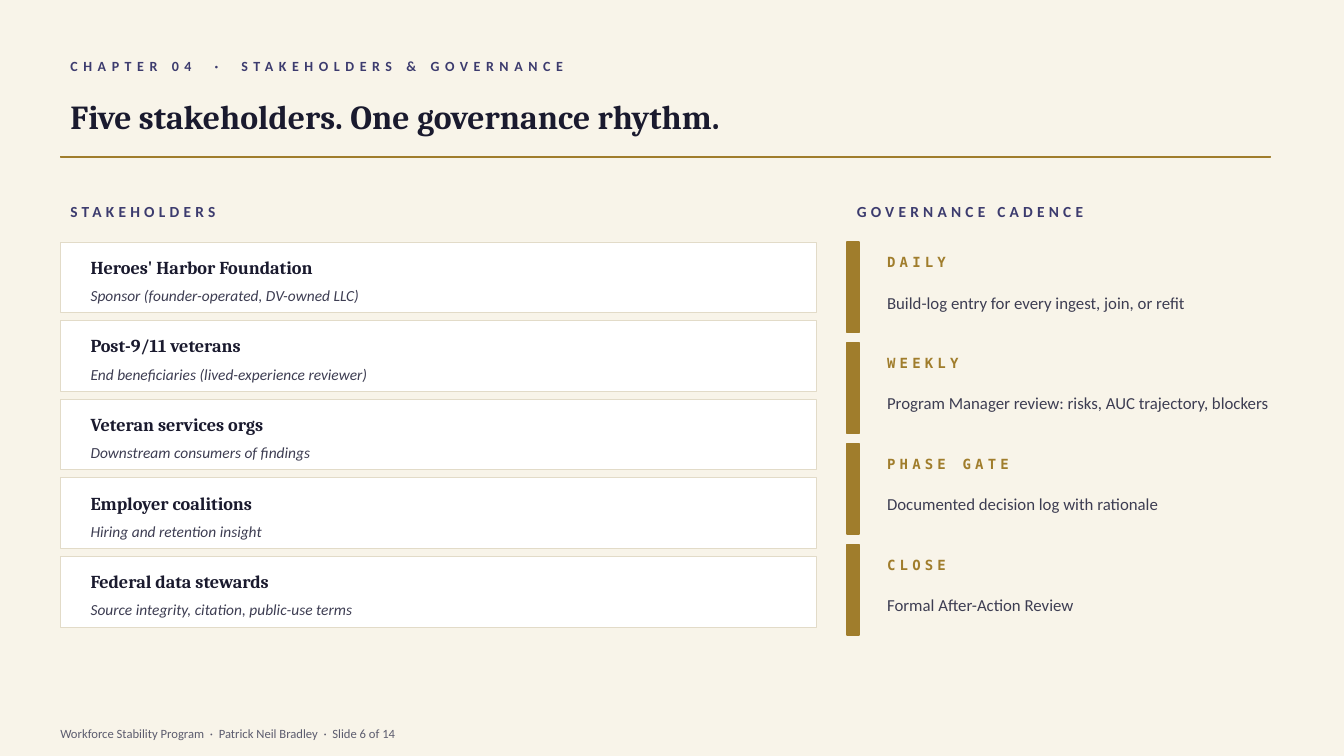
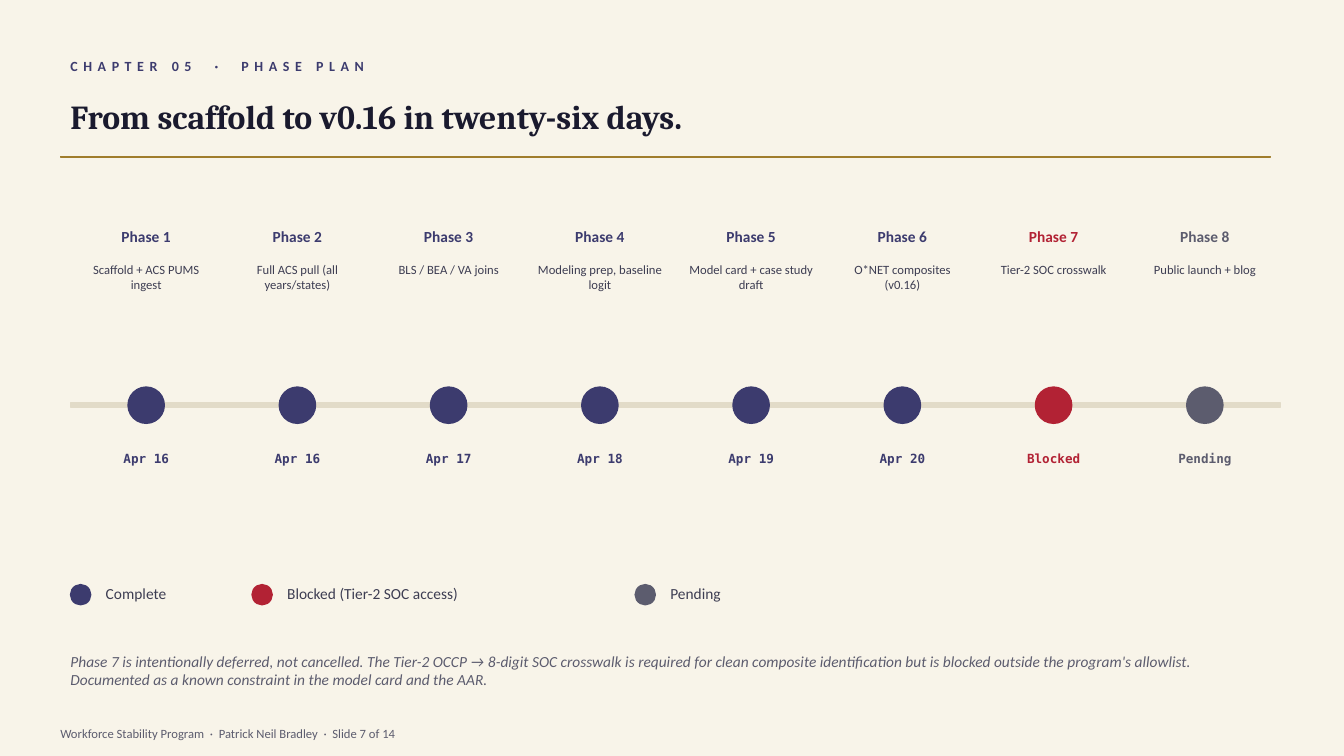
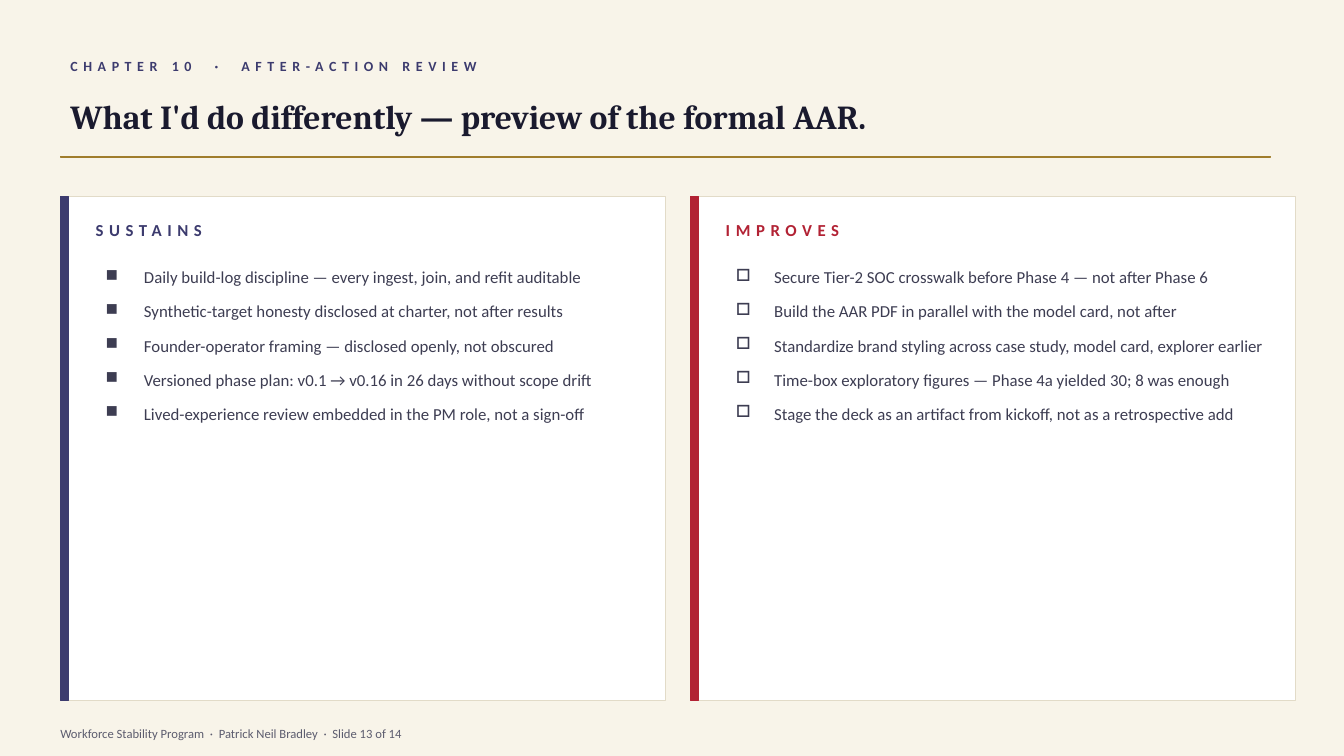
from lxml import etree
from pptx import Presentation
from pptx import util as u
from pptx.dml import color
from pptx.enum import shapes, text
from pptx.oxml import ns

NAVY, GOLD, RED, GREY = "3C3B6E", "A07D2C", "B22234", "5C5C6E"
INK, BODY, SAND, WHITE, CREAM = "1A1A2E", "3D3D52", "E2DBC8", "FFFFFF", "F8F4E9"
SANS, SERIF, MONO = "Calibri", "Cambria", "DejaVu Sans Mono"
RECT, OVAL = shapes.MSO_SHAPE.RECTANGLE, shapes.MSO_SHAPE.OVAL
MIDDLE, TOP = text.MSO_ANCHOR.MIDDLE, text.MSO_ANCHOR.TOP
LEFT, CENTER = text.PP_ALIGN.LEFT, text.PP_ALIGN.CENTER
hex_color = color.RGBColor.from_string


def add_text(page, at, lines, size, fill, name=SANS, bold=False, italic=False,
             spacing=0, align=LEFT, anchor=MIDDLE, bullet=None):
    box = page.shapes.add_textbox(*map(u.Inches, at))
    frame = box.text_frame
    frame.word_wrap = True
    frame.vertical_anchor = anchor
    style = {"size": u.Pt(size), "name": name, "bold": bold, "italic": italic}
    for index, line in enumerate(lines):
        para = frame.paragraphs[0] if index == 0 else frame.add_paragraph()
        if bullet:
            props = para._p.get_or_add_pPr()
            props.set("marL", str(u.Inches(0.38)))
            props.set("indent", str(u.Inches(-0.38)))
            etree.SubElement(props, ns.qn("a:buChar")).set("char", bullet)
            para.space_after = u.Pt(10)
        para.alignment = align
        span = para.add_run()
        span.text = line
        for key, value in style.items():
            setattr(span.font, key, value)
        span.font.color.rgb = hex_color(fill)
        if spacing:
            span._r.get_or_add_rPr().set("spc", str(spacing * 100))


def add_block(page, kind, at, fill, line=None, weight=1):
    block = page.shapes.add_shape(kind, *map(u.Inches, at))
    block.shadow.inherit = False
    block.fill.solid()
    block.fill.fore_color.rgb = hex_color(fill)
    block.line.color.rgb = hex_color(line or fill)
    block.line.width = u.Pt(weight)


deck = Presentation()
deck.slide_width, deck.slide_height = u.Inches(13.33), u.Inches(7.5)
backdrop = deck.slide_master.background.fill
backdrop.solid()
backdrop.fore_color.rgb = hex_color(CREAM)

headings = [
    ("CHAPTER 04  ·  STAKEHOLDERS & GOVERNANCE", "Five stakeholders. One governance rhythm.", 6),
    ("CHAPTER 05  ·  PHASE PLAN", "From scaffold to v0.16 in twenty-six days.", 7),
    ("CHAPTER 10  ·  AFTER-ACTION REVIEW", "What I'd do differently — preview of the formal AAR.", 13),
]
pages = []
for chapter, title, number in headings:
    page = deck.slides.add_slide(deck.slide_layouts[6])
    add_text(page, (0.6, 0.5, 8, 0.3), [chapter], 10, NAVY, bold=True, spacing=4)
    add_text(page, (0.6, 0.85, 12, 0.6), [title], 24, INK, SERIF, bold=True)
    add_block(page, RECT, (0.6, 1.55, 12, 0.01), GOLD)
    footer = f"Workforce Stability Program  ·  Patrick Neil Bradley  ·  Slide {number} of 14"
    add_text(page, (0.5, 7.15, 12.33, 0.25), [footer], 9, GREY)
    pages.append(page)
governance, plan, review = pages

for left, width, label in [(0.6, 7.5, "STAKEHOLDERS"), (8.4, 4.5, "GOVERNANCE CADENCE")]:
    add_text(governance, (left, 1.95, width, 0.3), [label], 11, NAVY, bold=True, spacing=3)

stakeholders = [
    ("Heroes' Harbor Foundation", "Sponsor (founder-operated, DV-owned LLC)"),
    ("Post-9/11 veterans", "End beneficiaries (lived-experience reviewer)"),
    ("Veteran services orgs", "Downstream consumers of findings"),
    ("Employer coalitions", "Hiring and retention insight"),
    ("Federal data stewards", "Source integrity, citation, public-use terms"),
]
for row, (group, role) in enumerate(stakeholders):
    top = 2.4 + 0.78 * row
    add_block(governance, RECT, (0.6, top, 7.5, 0.7), WHITE, SAND, 0.5)
    add_text(governance, (0.8, top + 0.1, 7.2, 0.3), [group], 13, INK, SERIF, bold=True)
    add_text(governance, (0.8, top + 0.38, 7.2, 0.3), [role], 11, BODY, italic=True)

cadence = [
    ("DAILY", "Build-log entry for every ingest, join, or refit"),
    ("WEEKLY", "Program Manager review: risks, AUC trajectory, blockers"),
    ("PHASE GATE", "Documented decision log with rationale"),
    ("CLOSE", "Formal After-Action Review"),
]
for row, (rhythm, activity) in enumerate(cadence):
    top = 2.4 + row
    add_block(governance, RECT, (8.4, top, 0.12, 0.9), GOLD)
    add_text(governance, (8.7, top + 0.05, 4.2, 0.3), [rhythm], 10, GOLD, MONO, bold=True, spacing=3)
    add_text(governance, (8.7, top + 0.35, 4.2, 0.5), [activity], 12, BODY)

add_block(plan, RECT, (0.7, 4, 12, 0.04), SAND)
phases = [
    ("Scaffold + ACS PUMS ingest", "Apr 16", NAVY),
    ("Full ACS pull (all years/states)", "Apr 16", NAVY),
    ("BLS / BEA / VA joins", "Apr 17", NAVY),
    ("Modeling prep, baseline logit", "Apr 18", NAVY),
    ("Model card + case study draft", "Apr 19", NAVY),
    ("O*NET composites (v0.16)", "Apr 20", NAVY),
    ("Tier-2 SOC crosswalk", "Blocked", RED),
    ("Public launch + blog", "Pending", GREY),
]
for index, (work, status, tone) in enumerate(phases):
    middle = 1.45 + 1.5 * index
    left = middle - 0.72
    add_block(plan, OVAL, (middle - 0.18, 3.84, 0.36, 0.36), tone)
    add_text(plan, (left, 2.2, 1.44, 0.3), [f"Phase {index + 1}"], 11, tone, bold=True, align=CENTER)
    add_text(plan, (left, 2.55, 1.44, 1.25), [work], 9, BODY, align=CENTER, anchor=TOP)
    add_text(plan, (left, 4.4, 1.44, 0.3), [status], 9, tone, MONO, bold=True, align=CENTER)

legend = [
    (0.7, 1.5, "Complete", NAVY),
    (2.5, 3.5, "Blocked (Tier-2 SOC access)", RED),
    (6.3, 1.5, "Pending", GREY),
]
for left, width, label, tone in legend:
    add_block(plan, OVAL, (left, 5.8, 0.2, 0.2), tone)
    add_text(plan, (left + 0.25, 5.74, width, 0.3), [label], 11, BODY)

note = ("Phase 7 is intentionally deferred, not cancelled. The Tier-2 OCCP → 8-digit SOC crosswalk "
        "is required for clean composite identification but is blocked outside the program's allowlist. "
        "Documented as a known constraint in the model card and the AAR.")
add_text(plan, (0.6, 6.3, 12, 0.7), [note], 11, GREY, italic=True)

panels = [
    ("SUSTAINS", NAVY, "■", [
        "Daily build-log discipline — every ingest, join, and refit auditable",
        "Synthetic-target honesty disclosed at charter, not after results",
        "Founder-operator framing — disclosed openly, not obscured",
        "Versioned phase plan: v0.1 → v0.16 in 26 days without scope drift",
        "Lived-experience review embedded in the PM role, not a sign-off",
    ]),
    ("IMPROVES", RED, "□", [
        "Secure Tier-2 SOC crosswalk before Phase 4 — not after Phase 6",
        "Build the AAR PDF in parallel with the model card, not after",
        "Standardize brand styling across case study, model card, explorer earlier",
        "Time-box exploratory figures — Phase 4a yielded 30; 8 was enough",
        "Stage the deck as an artifact from kickoff, not as a retrospective add",
    ]),
]
for column, (label, tone, mark, lessons) in enumerate(panels):
    left = 0.6 + 6.25 * column
    add_block(review, RECT, (left, 1.95, 6, 5), WHITE, SAND)
    add_block(review, RECT, (left, 1.95, 0.08, 5), tone)
    add_text(review, (left + 0.25, 2.1, 5.5, 0.35), [label], 12, tone, bold=True, spacing=4)
    add_text(review, (left + 0.35, 2.6, 5.5, 4.2), lessons, 12, BODY, anchor=TOP, bullet=mark)

deck.save("out.pptx")
